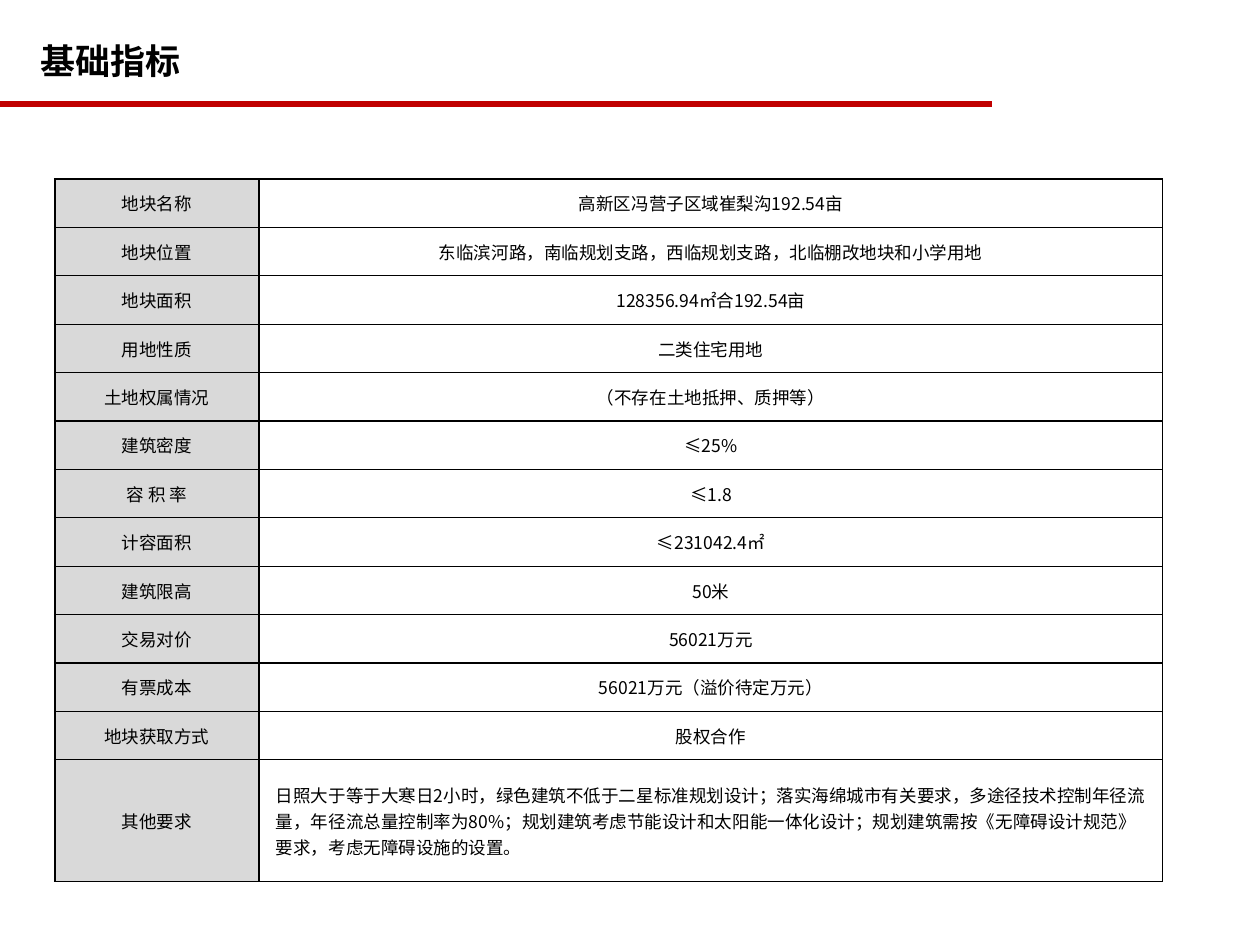
from lxml import etree
from pptx import Presentation
from pptx import util as u
from pptx.dml import color
from pptx.enum import shapes, text
from pptx.oxml import ns

SCALE = 10160
FONT = "Noto Sans CJK SC"
COLOURS = {"ink": "000000", "accent": "C00000", "label": "D9D9D9", "value": "FFFFFF"}

INDICATORS = [
    ("地块名称", "高新区冯营子区域崔梨沟192.54亩"),
    ("地块位置", "东临滨河路，南临规划支路，西临规划支路，北临棚改地块和小学用地"),
    ("地块面积", "128356.94㎡合192.54亩"),
    ("用地性质", "二类住宅用地"),
    ("土地权属情况", "（不存在土地抵押、质押等）"),
    ("建筑密度", "≤25%"),
    ("容 积 率", "≤1.8"),
    ("计容面积", "≤231042.4㎡"),
    ("建筑限高", "50米"),
    ("交易对价", "56021万元"),
    ("有票成本", "56021万元（溢价待定万元）"),
    ("地块获取方式", "股权合作"),
]
REQUIREMENTS = (
    "其他要求",
    "日照大于等于大寒日2小时，绿色建筑不低于二星标准规划设计；"
    "落实海绵城市有关要求，多途径技术控制年径流量，年径流总量控制率为80%；"
    "规划建筑考虑节能设计和太阳能一体化设计；"
    "规划建筑需按《无障碍设计规范》要求，考虑无障碍设施的设置。",
)


def px(length):
    return u.Emu(length * SCALE)


def rgb(name):
    return color.RGBColor.from_string(COLOURS[name])


def write(frame, content, size=14, bold=False, align=text.PP_ALIGN.CENTER):
    paragraph = frame.paragraphs[0]
    paragraph.alignment = align
    run = paragraph.add_run()
    run.text = content
    run.font.size = u.Pt(size)
    run.font.bold = bold
    run.font.name = FONT
    run.font.color.rgb = rgb("ink")
    properties = run.font._element
    etree.SubElement(properties, ns.qn("a:ea"), typeface=FONT)


class SlideBuilder:
    """Holds the style and the current slide, and adds each kind of element to it."""

    def __init__(self, presentation):
        self.slide = presentation.slides.add_slide(presentation.slide_layouts[6])

    def rule(self, x, y, width, weight):
        line = self.slide.shapes.add_connector(
            shapes.MSO_CONNECTOR.STRAIGHT, px(x), px(y), px(x + width), px(y))
        line.line.color.rgb = rgb("accent")
        line.line.width = u.Pt(weight)
        etree.SubElement(line._element.spPr, ns.qn("a:effectLst"))

    def title(self, content, x, y, width, height):
        frame = self.slide.shapes.add_textbox(px(x), px(y), px(width), px(height)).text_frame
        frame.word_wrap = True
        write(frame, content, size=28, bold=True, align=text.PP_ALIGN.LEFT)

    def table(self, rows, x, y, columns, heights):
        table = self.slide.shapes.add_table(
            len(rows), len(columns), px(x), px(y), px(sum(columns)), sum(heights)).table
        table.first_row = table.horz_banding = False
        for column, width in zip(table.columns, columns):
            column.width = px(width)
        for row, height, contents in zip(table.rows, heights, rows):
            row.height = height
            label, value = row.cells
            last = contents is rows[-1]
            self.cell(label, contents[0], "label", left=2.25)
            self.cell(value, contents[1], "value",
                      align=text.PP_ALIGN.LEFT if last else text.PP_ALIGN.CENTER)

    def cell(self, cell, content, fill, left=1, align=text.PP_ALIGN.CENTER):
        cell.fill.solid()
        cell.fill.fore_color.rgb = rgb(fill)
        cell.vertical_anchor = text.MSO_ANCHOR.MIDDLE
        cell.margin_left = cell.margin_right = px(17)
        cell.margin_top = cell.margin_bottom = px(8)
        write(cell.text_frame, content, align=align)
        properties = cell._tc.get_or_add_tcPr()
        for index, (side, weight) in enumerate(zip("LRTB", (left, 1, 1, 1))):
            border = etree.Element(ns.qn(f"a:ln{side}"), w=str(u.Pt(weight)))
            solid = etree.SubElement(border, ns.qn("a:solidFill"))
            etree.SubElement(solid, ns.qn("a:srgbClr"), val=COLOURS["ink"])
            properties.insert(index, border)


def main():
    presentation = Presentation()
    presentation.slide_width, presentation.slide_height = px(1260), px(945)
    builder = SlideBuilder(presentation)
    builder.rule(0, 104, 992, weight=4.5)
    builder.title("基础指标", 32, 35, 436, 51)
    row_height = u.Emu(px(581) // len(INDICATORS))
    heights = [row_height] * len(INDICATORS) + [px(122)]
    builder.table(INDICATORS + [REQUIREMENTS], 55, 179, (204, 904), heights)
    presentation.save("out.pptx")


if __name__ == "__main__":
    main()
